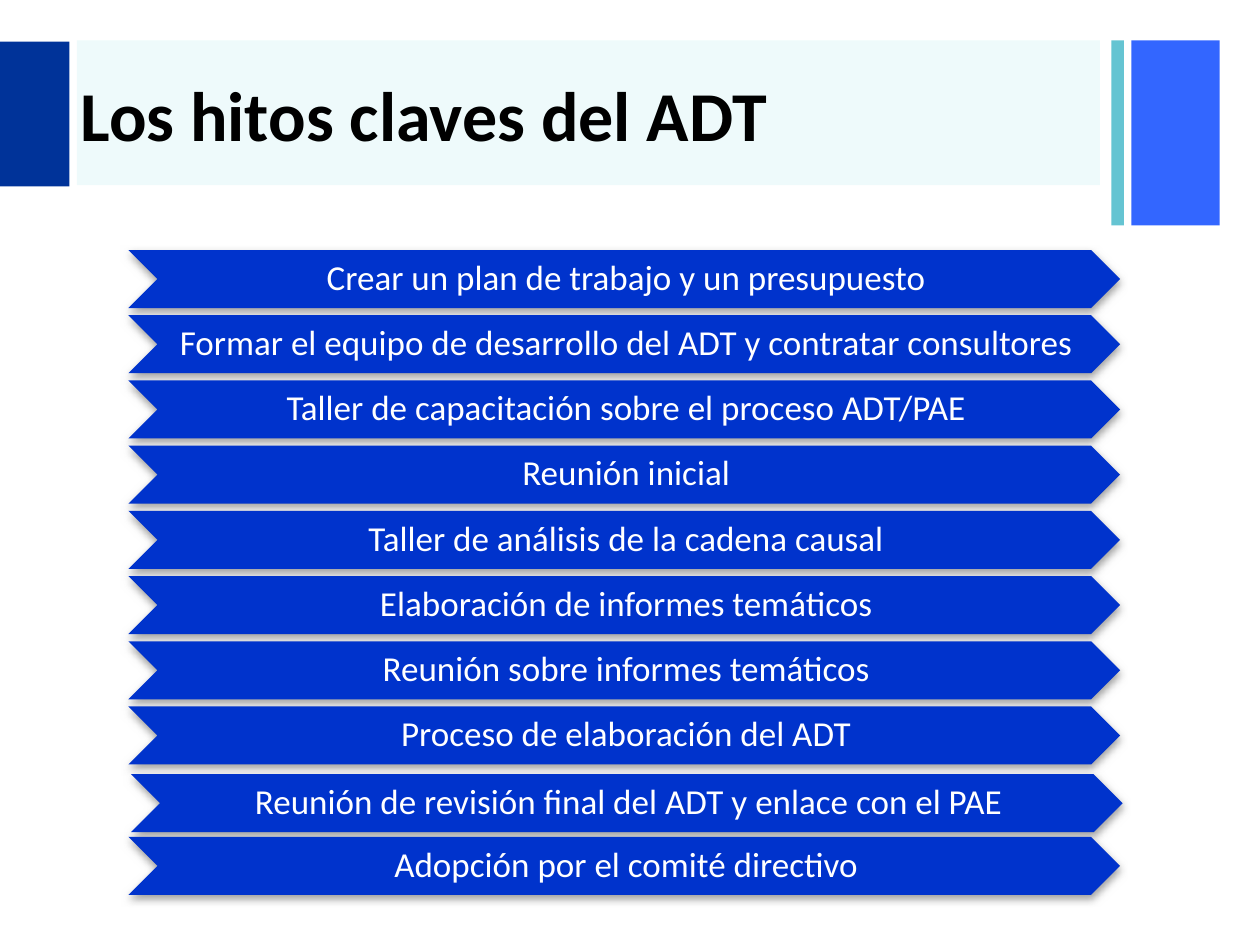
"""Build the slide of key ADT milestones as a stack of chevrons."""
from dataclasses import dataclass

from lxml.etree import SubElement
from pptx import Presentation
from pptx.dml.color import RGBColor
from pptx.enum.shapes import MSO_SHAPE
from pptx.enum.text import MSO_ANCHOR, PP_ALIGN
from pptx.oxml.ns import qn
from pptx.shapes.autoshape import Shape
from pptx.slide import Slide
from pptx.text.text import TextFrame
from pptx.util import Inches, Pt


@dataclass
class Block:
    left: float
    top: float
    width: float
    height: float
    color: str
    opacity: int = 100


@dataclass
class Milestone:
    text: str
    shift_right: float = 0
    shift_down: float = 0


HEADER_BLOCKS = [
    Block(8.98, 0.32, 0.7, 1.47, "3366FF"),
    Block(8.82, 0.32, 0.1, 1.47, "65C4D2"),
    Block(0.61, 0.32, 8.12, 1.15, "14C5D0", opacity=7),
    Block(0, 0.33, 0.55, 1.15, "003399"),
]
MILESTONES = [
    Milestone("Crear un plan de trabajo y un presupuesto"),
    Milestone("Formar el equipo de desarrollo del ADT y contratar consultores"),
    Milestone("Taller de capacitación sobre el proceso ADT/PAE"),
    Milestone("Reunión inicial"),
    Milestone("Taller de análisis de la cadena causal"),
    Milestone("Elaboración de informes temáticos"),
    Milestone("Reunión sobre informes temáticos"),
    Milestone("Proceso de elaboración del ADT"),
    Milestone("Reunión de revisión final del ADT y enlace con el PAE", 0.02, 0.02),
    Milestone("Adopción por el comité directivo"),
]
FIRST_TOP = 1.985
ROW_PITCH = 0.5175


def rgb(color: str) -> RGBColor:
    """Turn a hex string into a colour."""
    return RGBColor.from_string(color)


def write_text(frame: TextFrame, text: str, *, size: int, color: str,
               bold: bool = False, align: PP_ALIGN = PP_ALIGN.LEFT,
               line_spacing: float = 1.0) -> None:
    """Fill a text frame with one formatted paragraph."""
    frame.word_wrap = True
    frame.vertical_anchor = MSO_ANCHOR.MIDDLE
    paragraph = frame.paragraphs[0]
    paragraph.alignment = align
    paragraph.line_spacing = line_spacing
    run = paragraph.add_run()
    run.text = text
    run.font.name = "Calibri"
    run.font.size = Pt(size)
    run.font.bold = bold
    run.font.color.rgb = rgb(color)


def draw_block(slide: Slide, block: Block, kind: MSO_SHAPE = MSO_SHAPE.RECTANGLE) -> Shape:
    """Draw a filled shape without outline or shadow."""
    shape = slide.shapes.add_shape(kind, Inches(block.left), Inches(block.top),
                                   Inches(block.width), Inches(block.height))
    shape.shadow.inherit = False
    shape.line.fill.background()
    shape.fill.solid()
    shape.fill.fore_color.rgb = rgb(block.color)
    if block.opacity < 100:
        color_element = shape._element.spPr.find(qn("a:solidFill"))[0]
        SubElement(color_element, qn("a:alpha"), val=str(block.opacity * 1000))
    return shape


def add_soft_shadow(shape: Shape) -> None:
    """Give a shape a soft grey shadow that falls downwards."""
    effects = shape._element.spPr.find(qn("a:effectLst"))
    shadow = SubElement(effects, qn("a:outerShdw"), blurRad=str(Pt(5)), dist=str(Pt(2)),
                        dir="5400000", algn="ctr", rotWithShape="0")
    color_element = SubElement(shadow, qn("a:srgbClr"), val="808080")
    SubElement(color_element, qn("a:alpha"), val="75000")


def draw_milestone(slide: Slide, row: int, milestone: Milestone) -> None:
    """Draw one labelled chevron in its row."""
    block = Block(1.02 + milestone.shift_right,
                  FIRST_TOP + row * ROW_PITCH + milestone.shift_down,
                  7.87, 0.46, "0033CC")
    chevron = draw_block(slide, block, MSO_SHAPE.CHEVRON)
    add_soft_shadow(chevron)
    frame = chevron.text_frame
    frame.margin_left, frame.margin_right = Inches(0.03), 0
    frame.margin_top = frame.margin_bottom = Inches(0.01)
    write_text(frame, milestone.text, size=20, color="FFFFFF",
               align=PP_ALIGN.CENTER, line_spacing=0.9)


def place_title(slide: Slide, text: str) -> None:
    """Move the title placeholder over the header band and fill it."""
    title = slide.shapes.title
    title.left, title.top = Inches(0.54), Inches(0.34)
    title.width, title.height = Inches(8.27), Inches(1.12)
    write_text(title.text_frame, text, size=40, color="000000", bold=True)
    slide.shapes._spTree.append(title._element)


def main() -> None:
    """Build and save the presentation."""
    presentation = Presentation()
    presentation.slide_width, presentation.slide_height = Inches(10), Inches(7.5)
    slide = presentation.slides.add_slide(presentation.slide_layouts[5])
    for block in HEADER_BLOCKS:
        draw_block(slide, block)
    place_title(slide, "Los hitos claves del ADT")
    for row, milestone in enumerate(MILESTONES):
        draw_milestone(slide, row, milestone)
    presentation.save("out.pptx")


if __name__ == "__main__":
    main()
